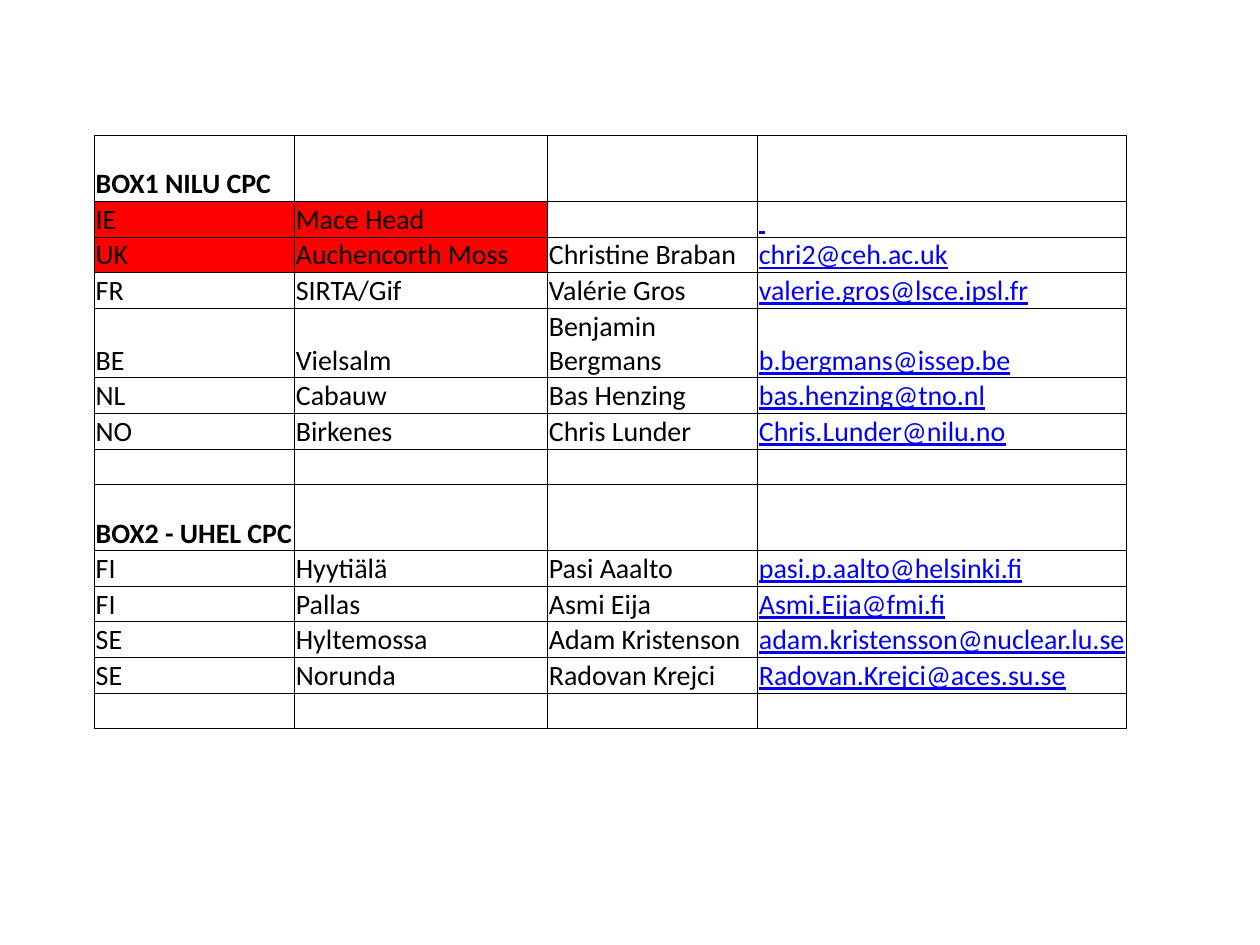
from lxml import etree
from pptx import Presentation
from pptx import util as u
from pptx.dml import color
from pptx.enum import text
from pptx.oxml import ns

BLACK, RED, BLUE = "000000", "FF0000", "0000FF"
COL_WIDTHS = [114.4, 144.6, 120, 210.7]
ROW_H, HEAD_H = 20.35, 37.8
EMAIL_COL = 3
EMPTY = ("", "", "", "")
ROWS = [
    ("BOX1 NILU CPC", "", "", ""),
    ("IE", "Mace Head", "", " "),
    ("UK", "Auchencorth Moss", "Christine Braban", "chri2@ceh.ac.uk"),
    ("FR", "SIRTA/Gif", "Valérie Gros", "valerie.gros@lsce.ipsl.fr"),
    ("BE", "Vielsalm", "Benjamin Bergmans", "b.bergmans@issep.be"),
    ("NL", "Cabauw", "Bas Henzing", "bas.henzing@tno.nl"),
    ("NO", "Birkenes", "Chris Lunder", "Chris.Lunder@nilu.no"),
    EMPTY,
    ("BOX2 - UHEL CPC", "", "", ""),
    ("FI", "Hyytiälä", "Pasi Aaalto", "pasi.p.aalto@helsinki.fi"),
    ("FI", "Pallas", "Asmi Eija", "Asmi.Eija@fmi.fi"),
    ("SE", "Hyltemossa", "Adam Kristenson", "adam.kristensson@nuclear.lu.se"),
    ("SE", "Norunda", "Radovan Krejci", "Radovan.Krejci@aces.su.se"),
    EMPTY,
]
RED_SITES = {"Mace Head", "Auchencorth Moss"}


def rgb(value):
    return color.RGBColor.from_string(value)


def put_text(tf, value, font="Calibri", size=16, ink=BLACK, bold=False, underline=False):
    p = tf.paragraphs[0]
    if not value:
        end = etree.SubElement(p._p, ns.qn("a:endParaRPr"), sz=str(size * 100))
        etree.SubElement(end, ns.qn("a:latin"), typeface=font)
        return
    r = p.add_run()
    r.text = value
    r.font.name = font
    r.font.size = u.Pt(size)
    r.font.bold = bold
    r.font.underline = underline
    r.font.color.rgb = rgb(ink)


class Deck:
    line_color = BLACK
    line_width = 0.5
    inset = 0.72

    def __init__(self, prs):
        self.s = prs.slides.add_slide(prs.slide_layouts[6])

    def borders(self, cell):
        tc_pr = cell._tc.get_or_add_tcPr()
        for side in ("lnL", "lnR", "lnT", "lnB"):
            ln = etree.SubElement(tc_pr, ns.qn(f"a:{side}"), w=str(int(u.Pt(self.line_width))))
            fill = etree.SubElement(ln, ns.qn("a:solidFill"))
            etree.SubElement(fill, ns.qn("a:srgbClr"), val=self.line_color)

    def cell(self, cell, value, fill=None, **fmt):
        cell.margin_left = cell.margin_right = cell.margin_top = u.Pt(self.inset)
        cell.margin_bottom = 0
        cell.vertical_anchor = text.MSO_ANCHOR.BOTTOM
        self.borders(cell)
        if fill:
            cell.fill.solid()
            cell.fill.fore_color.rgb = rgb(fill)
        else:
            cell.fill.background()
        put_text(cell.text_frame, value, **fmt)

    def table(self, left, top, widths, rows):
        heads = [row[0].startswith("BOX") for row in rows]
        heights = [HEAD_H if head else ROW_H for head in heads]
        sp = self.s.shapes.add_table(len(rows), len(widths), u.Pt(left), u.Pt(top),
                                     u.Pt(sum(widths)), u.Pt(sum(heights)))
        table = sp.table
        table.first_row = table.horz_banding = False
        for col, width in zip(table.columns, widths):
            col.width = u.Pt(width)
        for i, row in enumerate(rows):
            table.rows[i].height = u.Pt(heights[i])
            for j, value in enumerate(row):
                email = j == EMAIL_COL
                self.cell(table.cell(i, j), value,
                          fill=RED if j < 2 and row[1] in RED_SITES else None,
                          ink=BLUE if email else BLACK,
                          bold=heads[i], underline=email)


def main():
    prs = Presentation()
    prs.slide_width, prs.slide_height = u.Pt(720), u.Pt(540)
    Deck(prs).table(54, 77.3, COL_WIDTHS, ROWS)
    prs.save("out.pptx")


if __name__ == "__main__":
    main()
